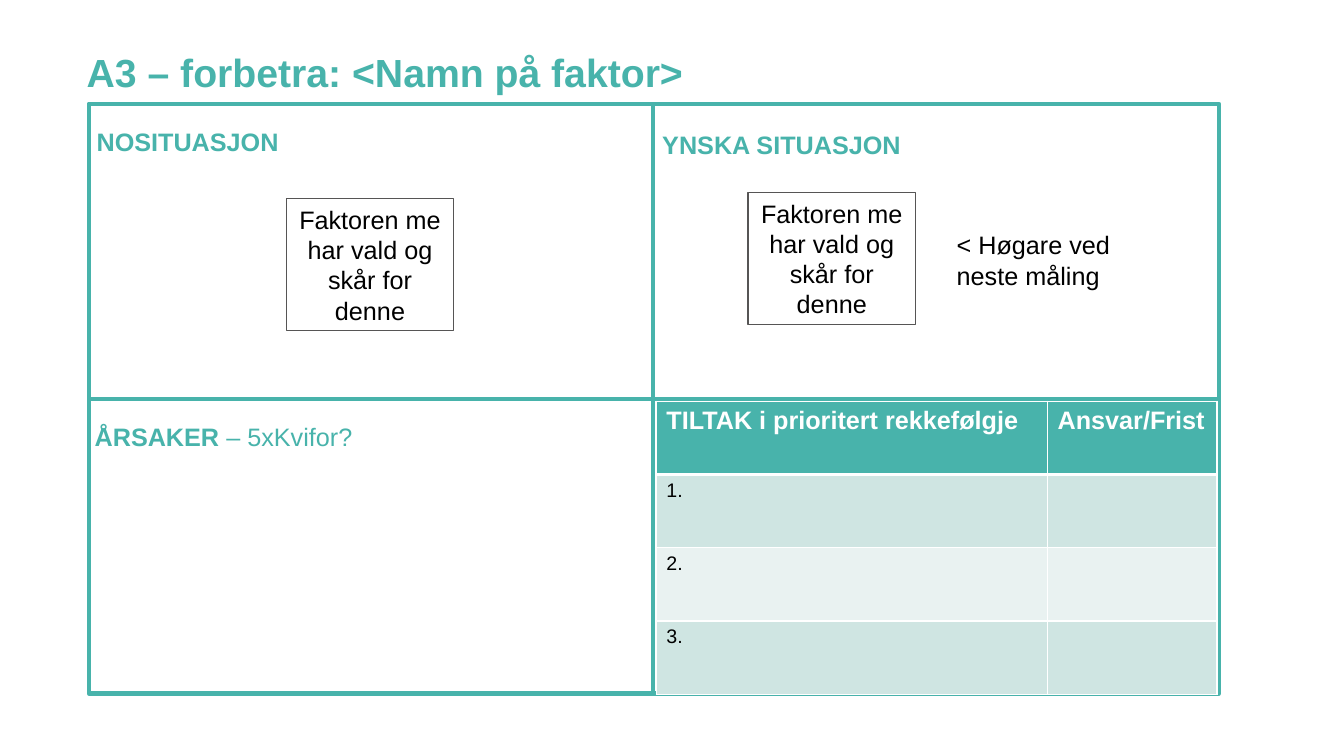
from lxml import etree
from pptx import Presentation
from pptx.dml.color import RGBColor
from pptx.enum.shapes import MSO_CONNECTOR, MSO_SHAPE
from pptx.enum.text import MSO_ANCHOR, PP_ALIGN
from pptx.oxml.ns import qn
from pptx.util import Inches, Pt

RECT = MSO_SHAPE.RECTANGLE
LINE = MSO_CONNECTOR.STRAIGHT
BOTTOM = MSO_ANCHOR.BOTTOM
CENTER = PP_ALIGN.CENTER

TEAL = RGBColor(0x48, 0xB3, 0xAB)
PALE = RGBColor(0xCF, 0xE5, 0xE2)
LIGHT = RGBColor(0xE9, 0xF2, 0xF1)
GREY = RGBColor(0x56, 0x55, 0x55)
WHITE = RGBColor(0xFF, 0xFF, 0xFF)
BLACK = RGBColor(0, 0, 0)

LEFT, TOP, WIDTH, HEIGHT = 0.88, 1.03, 11.21, 5.85
MID_X, MID_Y = 6.48, 3.96
FACTOR = "Faktoren me har vald og skår for denne"


def add_run(para, text, color, size=18, bold=False):
    run = para.add_run()
    run.text = text
    font = run.font
    font.name, font.size, font.bold = "Arial", Pt(size), bold
    font.color.rgb = color


def add_text(slide, box, *runs):
    frame = slide.shapes.add_textbox(*map(Inches, box)).text_frame
    frame.word_wrap = True
    for text, color, bold in runs:
        add_run(frame.paragraphs[0], text, color, bold=bold)


def add_title(slide, text):
    box = slide.shapes.add_textbox(
        Inches(0.86), Inches(0.27), Inches(12.23), Inches(0.68))
    frame = box.text_frame
    frame.word_wrap = True
    frame.vertical_anchor = BOTTOM
    frame.margin_left = frame.margin_right = 0
    frame.margin_top = frame.margin_bottom = 0
    para = frame.paragraphs[0]
    para.line_spacing = 0.9
    add_run(para, text, TEAL, 28, True)


def add_rect(slide, box, color, width):
    rect = slide.shapes.add_shape(RECT, *map(Inches, box))
    rect.shadow.inherit = False
    rect.fill.solid()
    rect.fill.fore_color.rgb = WHITE
    rect.line.color.rgb = color
    rect.line.width = Pt(width)
    return rect


def add_factor(slide, left, top):
    frame = add_rect(slide, (left, top, 1.66, 1.31), GREY, 1).text_frame
    frame.word_wrap = True
    para = frame.paragraphs[0]
    para.alignment = CENTER
    add_run(para, FACTOR, BLACK)


def add_line(slide, *ends):
    line = slide.shapes.add_connector(LINE, *map(Inches, ends))
    line.line.color.rgb = TEAL
    line.line.width = Pt(3)
    etree.SubElement(line._element.spPr, qn("a:effectLst"))


def add_edges(cell, widths):
    props = cell._tc.get_or_add_tcPr()
    for index, (side, width) in enumerate(zip("LRTB", widths)):
        edge = etree.Element(qn(f"a:ln{side}"), w=str(Pt(width)))
        fill = etree.SubElement(edge, qn("a:solidFill"))
        etree.SubElement(fill, qn("a:srgbClr"), val=str(WHITE))
        props.insert(index, edge)


def add_plan(slide, rows):
    frame = slide.shapes.add_table(
        len(rows), 2, Inches(6.51), Inches(3.98), Inches(5.56), Inches(2.91))
    table = frame.table
    for col, width in zip(table.columns, (3.88, 1.68)):
        col.width = Inches(width)
    for y, texts in enumerate(rows):
        head = y == 0
        for x, text in enumerate(texts):
            cell = table.cell(y, x)
            cell.fill.solid()
            cell.fill.fore_color.rgb = TEAL if head else PALE if y % 2 else LIGHT
            add_edges(cell, (1, 1, 3 if y == 1 else 1, 3 if head else 1))
            if text:
                add_run(cell.text_frame.paragraphs[0], text,
                        WHITE if head else BLACK, 18 if head else 14, head)


def main():
    deck = Presentation()
    deck.slide_width, deck.slide_height = Inches(13.33), Inches(7.5)
    slide = deck.slides.add_slide(deck.slide_layouts[6])

    add_rect(slide, (LEFT, TOP, WIDTH, HEIGHT), TEAL, 3)
    add_line(slide, MID_X, TOP, MID_X, TOP + HEIGHT)
    add_line(slide, LEFT, MID_Y, LEFT + WIDTH, MID_Y)

    add_text(slide, (0.86, 1.2, 5.62, 0.71), ("NOSITUASJON", TEAL, True))
    add_text(slide, (6.47, 1.23, 5.6, 0.4), ("YNSKA SITUASJON", TEAL, True))
    add_text(slide, (0.84, 4.13, 3.52, 0.4),
             ("ÅRSAKER ", TEAL, True), ("– 5xKvifor?", TEAL, False))
    add_plan(slide, [
        ("TILTAK i prioritert rekkefølgje", "Ansvar/Frist"),
        ("1.", ""),
        ("2.", ""),
        ("3.", ""),
    ])
    add_title(slide, "A3 – forbetra: <Namn på faktor>")
    add_text(slide, (9.39, 2.23, 2.21, 0.71),
             ("< Høgare ved neste måling", BLACK, False))
    add_factor(slide, 2.84, 1.97)
    add_factor(slide, 7.42, 1.91)

    deck.save("out.pptx")


if __name__ == "__main__":
    main()
